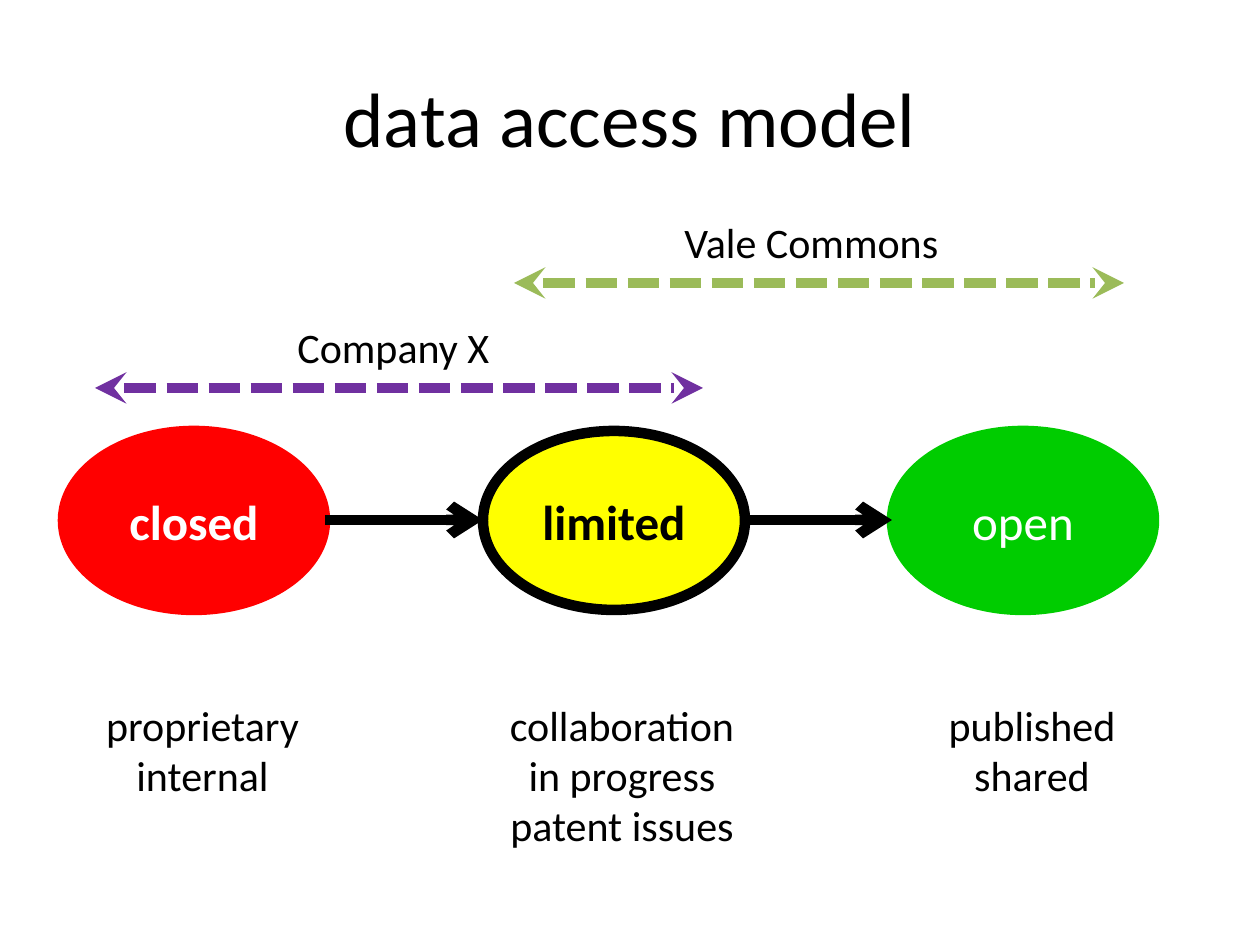
"""Build the data access model slide."""
from lxml.etree import SubElement
from pptx import Presentation
from pptx.dml.color import RGBColor
from pptx.enum.shapes import MSO_CONNECTOR, MSO_SHAPE
from pptx.enum.text import MSO_ANCHOR, MSO_AUTO_SIZE, PP_ALIGN
from pptx.oxml.ns import qn
from pptx.util import Emu, Pt

COLORS = {
    "black": "000000", "white": "FFFFFF", "red": "FF0000", "yellow": "FFFF00",
    "green": "00CC00", "olive": "9BBB59", "purple": "7030A0",
}
PX = 914400 / 126


def px(*values):
    return [Emu(round(v * PX)) for v in values]


def write(tf, lines, align=PP_ALIGN.CENTER, color="black", **font):
    for i, line in enumerate(lines):
        p = tf.add_paragraph() if i else tf.paragraphs[0]
        p.alignment = align
        r = p.add_run()
        r.text = line
        r.font.color.rgb = RGBColor.from_string(COLORS[color])
        for name, value in {"name": "Calibri", **font}.items():
            setattr(r.font, name, value)


prs = Presentation()
prs.slide_width, prs.slide_height = px(1260, 945)
s = prs.slides.add_slide(prs.slide_layouts[5])

title = s.shapes.title
title.left, title.top, title.width, title.height = px(63, 38, 1134, 158)
title.text_frame.vertical_anchor = MSO_ANCHOR.MIDDLE
write(title.text_frame, ["data access model"], size=Pt(44))

stages = [
    ("closed", 63, "red", "red", "white", True),
    ("limited", 483, "yellow", "black", "black", True),
    ("open", 892, "green", "green", "white", False),
]
for text, x, fill, line, color, bold in stages:
    sp = s.shapes.add_shape(MSO_SHAPE.OVAL, *px(x, 431, 262, 179))
    sp.shadow.inherit = False
    sp.fill.solid()
    sp.fill.fore_color.rgb = RGBColor.from_string(COLORS[fill])
    sp.line.color.rgb = RGBColor.from_string(COLORS[line])
    sp.line.width = Pt(6)
    sp.text_frame.vertical_anchor = MSO_ANCHOR.MIDDLE
    write(sp.text_frame, [text], color=color, size=Pt(28), bold=bold)

flow = {"tailEnd": "arrow"}
span = {"prstDash": "sysDash", "headEnd": "stealth", "tailEnd": "stealth"}
arrows = [
    (325, 483, 520, "black", flow),
    (745, 892, 520, "black", flow),
    (514, 1124, 283, "olive", span),
    (95, 703, 388, "purple", span),
]
for x1, x2, y, color, ends in arrows:
    cn = s.shapes.add_connector(MSO_CONNECTOR.STRAIGHT, *px(x1, y, x2, y))
    cn.line.color.rgb = RGBColor.from_string(COLORS[color])
    cn.line.width = Pt(6)
    ln = cn.line._get_or_add_ln()
    for tag, value in ends.items():
        SubElement(ln, qn(f"a:{tag}")).set("val" if tag == "prstDash" else "type", value)
    SubElement(cn._element.spPr, qn("a:effectLst"))

labels = [
    (["published", "shared"], 935, 693, 194, 115, PP_ALIGN.CENTER),
    (["collaboration", "in progress", "patent issues"], 496, 693, 252, 165, PP_ALIGN.CENTER),
    (["proprietary", "internal"], 92, 693, 221, 115, PP_ALIGN.CENTER),
    (["Vale Commons"], 672, 210, 289, 63, PP_ALIGN.LEFT),
    (["Company X"], 285, 315, 219, 63, PP_ALIGN.LEFT),
]
for lines, x, y, w, h, align in labels:
    tf = s.shapes.add_textbox(*px(x, y, w, h)).text_frame
    tf.word_wrap = False
    tf.auto_size = MSO_AUTO_SIZE.SHAPE_TO_FIT_TEXT
    write(tf, lines, align, size=Pt(24))

prs.save("out.pptx")
